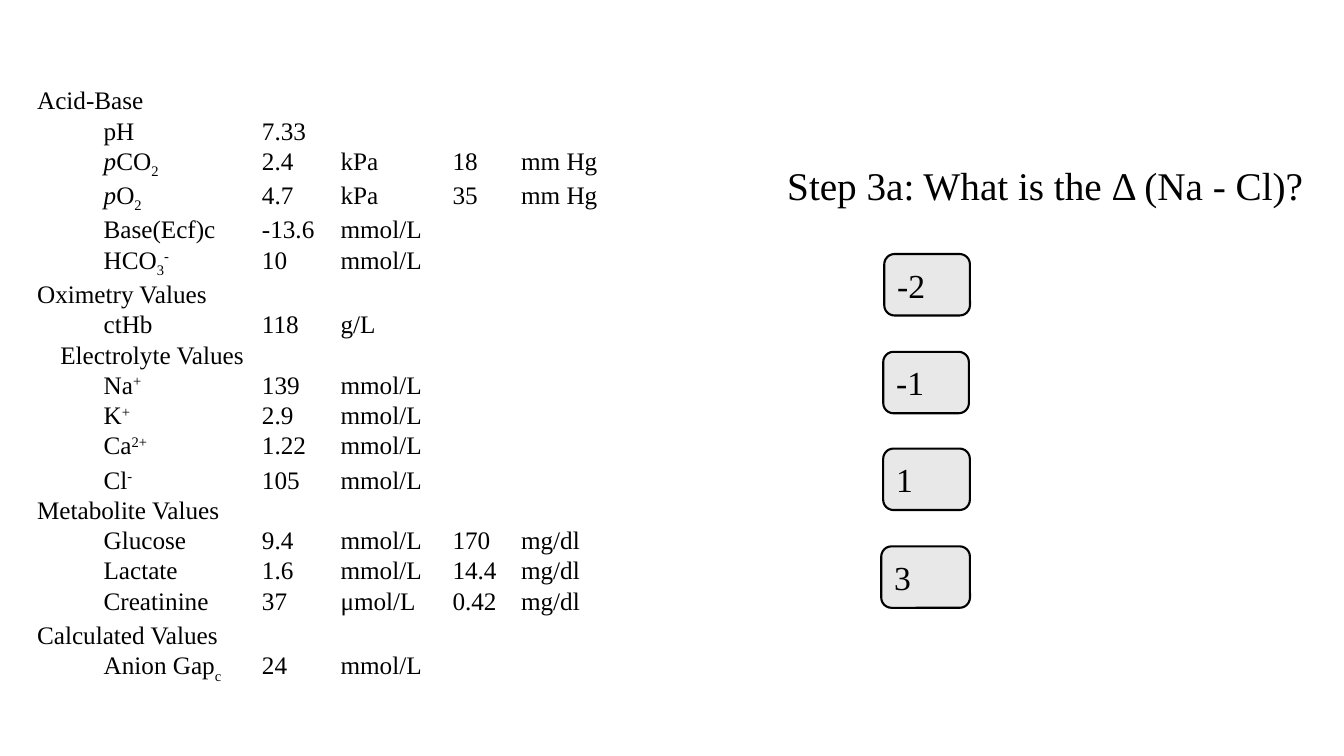
"""Build a slide with blood gas results and one multiple-choice question."""
from dataclasses import dataclass

import lxml.etree
import pptx
import pptx.dml.color
import pptx.enum.shapes
import pptx.enum.text
import pptx.oxml.ns
import pptx.shapes.autoshape
import pptx.slide
import pptx.util

EMU_PER_PX = 9144
FONT = "Times New Roman"
COLORS = {"text": "000000", "answer": "E8E8E8", "outline": "000000"}
SUBSCRIPT = -25000
SUPERSCRIPT = 30000
RESULT_TABS = (23, 66, 223, 301, 412, 480)


@dataclass(frozen=True)
class Run:
    text: str
    baseline: int = 0
    italic: bool = False


@dataclass(frozen=True)
class Line:
    runs: tuple[Run, ...]
    space_after: int = 0


@dataclass(frozen=True)
class Measurement:
    name: tuple[Run, ...]
    values: str
    space_after: int = 0


@dataclass(frozen=True)
class Section:
    title: str
    measurements: tuple[Measurement, ...]


@dataclass(frozen=True)
class Answer:
    text: str
    left: int
    top: int
    width: int


def plain(name: str, values: str, space_after: int = 0) -> Measurement:
    return Measurement((Run(name),), values, space_after)


def ion(name: str, charge: str, values: str, space_after: int = 0) -> Measurement:
    return Measurement((Run(name), Run(charge, SUPERSCRIPT)), values, space_after)


def pressure(gas: str, values: str) -> Measurement:
    return Measurement((Run("p", italic=True), Run(gas), Run("2", SUBSCRIPT)), values)


SECTIONS = (
    Section("Acid-Base", (
        plain("pH", "7.33"),
        pressure("CO", "2.4\tkPa\t18\tmm Hg"),
        pressure("O", "4.7\tkPa\t35\tmm Hg"),
        plain("Base(Ecf)c", "-13.6\tmmol/L"),
        Measurement((Run("HCO"), Run("3", SUBSCRIPT), Run("-", SUPERSCRIPT)),
                    "10\tmmol/L"),
    )),
    Section("Oximetry Values", (plain("ctHb", "118\tg/L"),)),
    Section("\tElectrolyte Values", (
        ion("Na", "+", "139\tmmol/L"),
        ion("K", "+", "2.9\tmmol/L"),
        ion("Ca", "2+", "1.22\tmmol/L", space_after=3),
        ion("Cl", "-", "105\tmmol/L"),
    )),
    Section("Metabolite Values", (
        plain("Glucose", "9.4\tmmol/L\t170\tmg/dl"),
        plain("Lactate", "1.6\tmmol/L\t14.4\tmg/dl"),
        plain("Creatinine", "37\tμmol/L\t0.42\tmg/dl", space_after=3),
    )),
    Section("Calculated Values", (
        Measurement((Run("Anion Gap"), Run("c", SUBSCRIPT)), "24\tmmol/L"),
    )),
)

ANSWER_HEIGHT = 61
ANSWERS = (
    Answer("-2", 877, 252, 85),
    Answer("-1", 876, 349, 85),
    Answer("1", 876, 445, 86),
    Answer("3", 874, 542, 88),
)


def px(length: int) -> pptx.util.Emu:
    return pptx.util.Emu(length * EMU_PER_PX)


def color(name: str) -> pptx.dml.color.RGBColor:
    return pptx.dml.color.RGBColor.from_string(COLORS[name])


def write_text(
    shape: pptx.shapes.autoshape.Shape,
    lines: tuple[Line, ...],
    *,
    size: int,
    tabs: tuple[int, ...] = (),
    grow: bool = False,
    anchor: pptx.enum.text.MSO_ANCHOR = pptx.enum.text.MSO_ANCHOR.TOP,
) -> None:
    frame = shape.text_frame
    frame.word_wrap = True
    frame.vertical_anchor = anchor
    if grow:
        frame.auto_size = pptx.enum.text.MSO_AUTO_SIZE.SHAPE_TO_FIT_TEXT
    for index, line in enumerate(lines):
        paragraph = frame.add_paragraph() if index else frame.paragraphs[0]
        paragraph.alignment = pptx.enum.text.PP_ALIGN.LEFT
        if line.space_after:
            paragraph.space_after = pptx.util.Pt(line.space_after)
        if tabs:
            properties = paragraph._p.get_or_add_pPr()
            tab_list = lxml.etree.SubElement(properties, pptx.oxml.ns.qn("a:tabLst"))
            for position in tabs:
                lxml.etree.SubElement(tab_list, pptx.oxml.ns.qn("a:tab"),
                                      pos=str(px(position)), algn="l")
        for part in line.runs:
            run = paragraph.add_run()
            run.text = part.text
            run.font.name = FONT
            run.font.size = pptx.util.Pt(size)
            run.font.color.rgb = color("text")
            if part.italic:
                run.font.italic = True
            if part.baseline:
                run.font._element.set("baseline", str(part.baseline))


def result_lines(sections: tuple[Section, ...]) -> tuple[Line, ...]:
    lines: list[Line] = []
    for section in sections:
        lines.append(Line((Run(section.title),)))
        for measurement in section.measurements:
            runs = (Run("\t\t"), *measurement.name, Run("\t" + measurement.values))
            lines.append(Line(runs, measurement.space_after))
    return tuple(lines)


def add_answer(slide: pptx.slide.Slide, answer: Answer) -> None:
    shape = slide.shapes.add_shape(
        pptx.enum.shapes.MSO_SHAPE.ROUNDED_RECTANGLE,
        px(answer.left), px(answer.top), px(answer.width), px(ANSWER_HEIGHT))
    shape.shadow.inherit = False
    shape.fill.solid()
    shape.fill.fore_color.rgb = color("answer")
    shape.line.color.rgb = color("outline")
    shape.line.width = pptx.util.Pt(1.5)
    write_text(shape, (Line((Run(answer.text),)),), size=24,
               anchor=pptx.enum.text.MSO_ANCHOR.MIDDLE)


def main() -> None:
    presentation = pptx.Presentation()
    presentation.slide_width = px(1333)
    presentation.slide_height = px(750)
    slide = presentation.slides.add_slide(presentation.slide_layouts[6])

    question = slide.shapes.add_textbox(px(771), px(155), px(550), px(57))
    write_text(question, (Line((Run("Step 3a: What is the Δ (Na - Cl)?"),)),),
               size=28, grow=True)
    for answer in ANSWERS:
        add_answer(slide, answer)
    results = slide.shapes.add_textbox(px(27), px(79), px(623), px(586))
    write_text(results, result_lines(SECTIONS), size=18, tabs=RESULT_TABS, grow=True)

    presentation.save("out.pptx")


if __name__ == "__main__":
    main()
